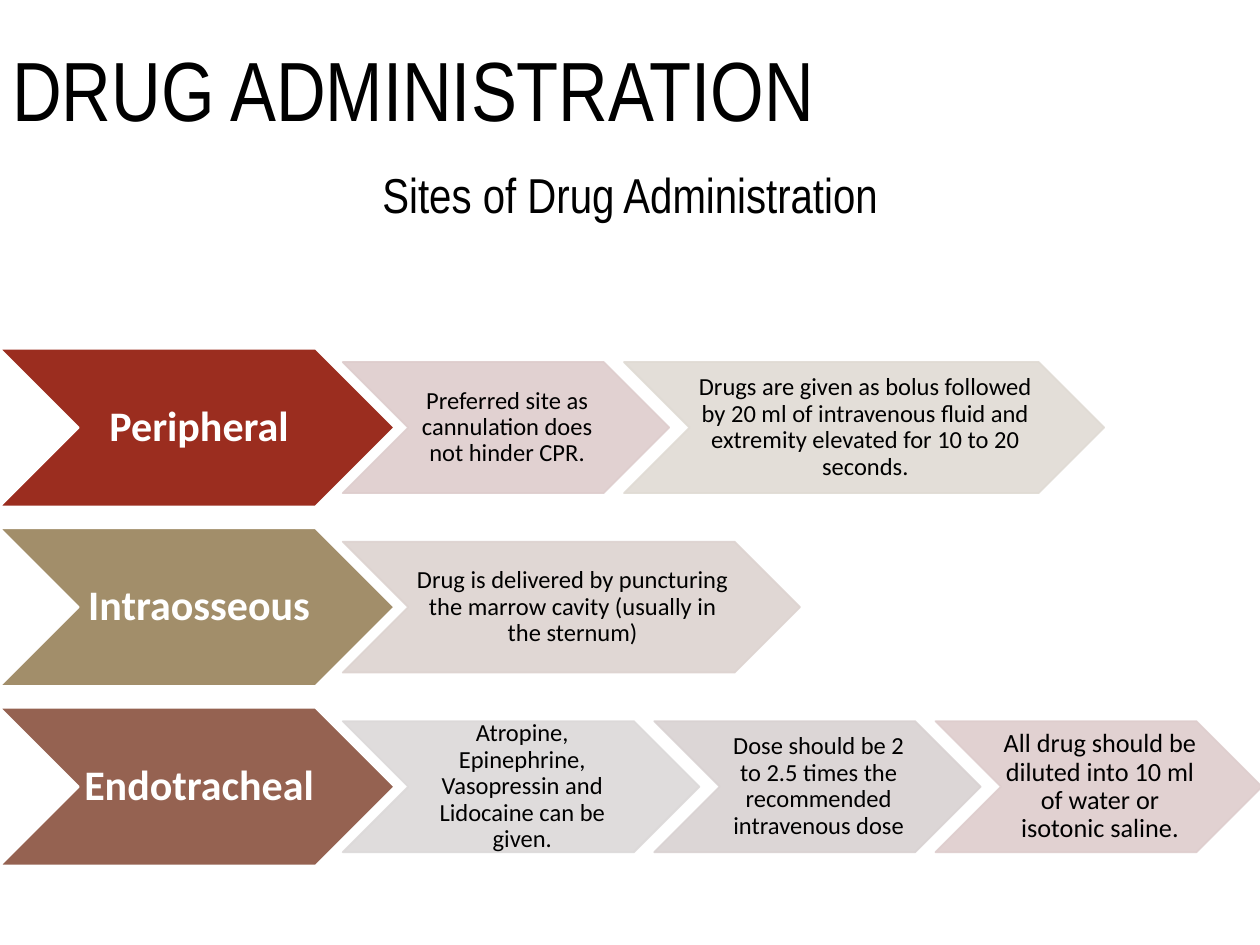
from lxml.etree import SubElement
from pptx import Presentation
from pptx.dml.color import RGBColor
from pptx.enum.shapes import MSO_SHAPE as Preset
from pptx.enum.text import MSO_ANCHOR as Anchor, PP_ALIGN as Align
from pptx.oxml.ns import qn
from pptx.util import Cm, Pt

BLACK = RGBColor(0x00, 0x00, 0x00)
WHITE = RGBColor(0xFF, 0xFF, 0xFF)
RED = RGBColor(0x9B, 0x2D, 0x1F)
TAN = RGBColor(0xA2, 0x8E, 0x6A)
BROWN = RGBColor(0x95, 0x62, 0x51)
PALE_ROSE = RGBColor(0xDE, 0xCD, 0xCD)
PALE_SAND = RGBColor(0xE0, 0xDB, 0xD4)
PALE_CLAY = RGBColor(0xDD, 0xD3, 0xD0)
PALE_GREY = RGBColor(0xDC, 0xD9, 0xD9)
PALE_MAUVE = RGBColor(0xD9, 0xD2, 0xD2)

ROW_TOP, ROW_PITCH = 7.03, 3.62
SITE_WIDTH, SITE_HEIGHT, SITE_OVERLAP = 7.95, 3.18, 1.04
DETAIL_HEIGHT, DETAIL_OVERLAP = 2.64, 0.91

HEADING_FONT = {"name": "Arial Narrow", "size": Pt(48)}
SUBTITLE_FONT = {"name": "Arial Narrow", "size": Pt(28)}
SITE_FONT = {"name": "Calibri", "size": Pt(24), "bold": True}
DETAIL_FONT = {"name": "Calibri", "size": Pt(14)}
SITE_FRAME = {"margin_left": Cm(0.08), "margin_right": 0,
              "margin_top": Cm(0.05), "margin_bottom": Cm(0.05)}
DETAIL_FRAME = {"margin_left": Cm(0.05), "margin_right": 0,
                "margin_top": Cm(0.03), "margin_bottom": Cm(0.03)}

ROWS = [
    ("Peripheral", RED, [
        ("Preferred site as cannulation does not hinder CPR.",
         6.58, PALE_ROSE, 14),
        ("Drugs are given as bolus followed by 20 ml of intravenous fluid "
         "and extremity elevated for 10 to 20 seconds.",
         9.68, PALE_SAND, 14),
    ]),
    ("Intraosseous", TAN, [
        ("Drug is delivered by puncturing the marrow cavity "
         "(usually in the sternum)", 9.22, PALE_CLAY, 14),
    ]),
    ("Endotracheal", BROWN, [
        ("Atropine, Epinephrine, Vasopressin and Lidocaine can be given.",
         7.19, PALE_GREY, 14),
        ("Dose should be 2 to 2.5 times the recommended intravenous dose",
         6.58, PALE_MAUVE, 14),
        ("All drug should be diluted into 10 ml of water or isotonic saline.",
         6.58, PALE_ROSE, 15),
    ]),
]


def apply_format(target, values):
    for name, value in values.items():
        setattr(target, name, value)


def write_text(shape, text, font, color, align, frame, spacing=0.9):
    text_frame = shape.text_frame
    apply_format(text_frame, {"word_wrap": True,
                              "vertical_anchor": Anchor.MIDDLE, **frame})
    paragraph = text_frame.paragraphs[0]
    apply_format(paragraph, {"alignment": align, "line_spacing": spacing})
    run = paragraph.add_run()
    run.text = text
    apply_format(run.font, font)
    run.font.color.rgb = color


def add_label(slide, box, text, font, align, spacing):
    shape = slide.shapes.add_textbox(*(Cm(value) for value in box))
    write_text(shape, text, font, BLACK, align, {}, spacing)


def add_chevron(slide, box, fill_color, line_color):
    shape = slide.shapes.add_shape(Preset.CHEVRON,
                                   *(Cm(value) for value in box))
    shape.shadow.inherit = False
    shape.fill.solid()
    shape.fill.fore_color.rgb = fill_color
    shape.line.color.rgb = line_color
    shape.line.width = Pt(1)
    return shape


def make_translucent(shape, percent):
    for color in shape.element.spPr.iter(qn("a:srgbClr")):
        SubElement(color, qn("a:alpha")).set("val", str(percent * 1000))


def add_row(slide, top, site, site_color, details):
    head = add_chevron(slide, (0, top, SITE_WIDTH, SITE_HEIGHT),
                       site_color, WHITE)
    write_text(head, site, SITE_FONT, WHITE, Align.CENTER, SITE_FRAME)
    left = SITE_WIDTH - SITE_OVERLAP
    detail_top = top + (SITE_HEIGHT - DETAIL_HEIGHT) / 2
    for text, width, color, size in details:
        detail = add_chevron(slide, (left, detail_top, width, DETAIL_HEIGHT),
                             color, color)
        make_translucent(detail, 90)
        write_text(detail, text, {**DETAIL_FONT, "size": Pt(size)}, BLACK,
                   Align.CENTER, DETAIL_FRAME)
        left += width - DETAIL_OVERLAP


def main():
    presentation = Presentation()
    apply_format(presentation, {"slide_width": Cm(25.4),
                                "slide_height": Cm(19.05)})
    slide = presentation.slides.add_slide(presentation.slide_layouts[6])
    add_label(slide, (0, 0.3, 25.4, 3.2), "DRUG ADMINISTRATION",
              HEADING_FONT, Align.LEFT, 0.9)
    for index, row in enumerate(ROWS):
        add_row(slide, ROW_TOP + index * ROW_PITCH, *row)
    add_label(slide, (0, 3.18, 25.4, 1.45), "Sites of Drug Administration",
              SUBTITLE_FONT, Align.CENTER, 1.0)
    presentation.save("out.pptx")


if __name__ == "__main__":
    main()
